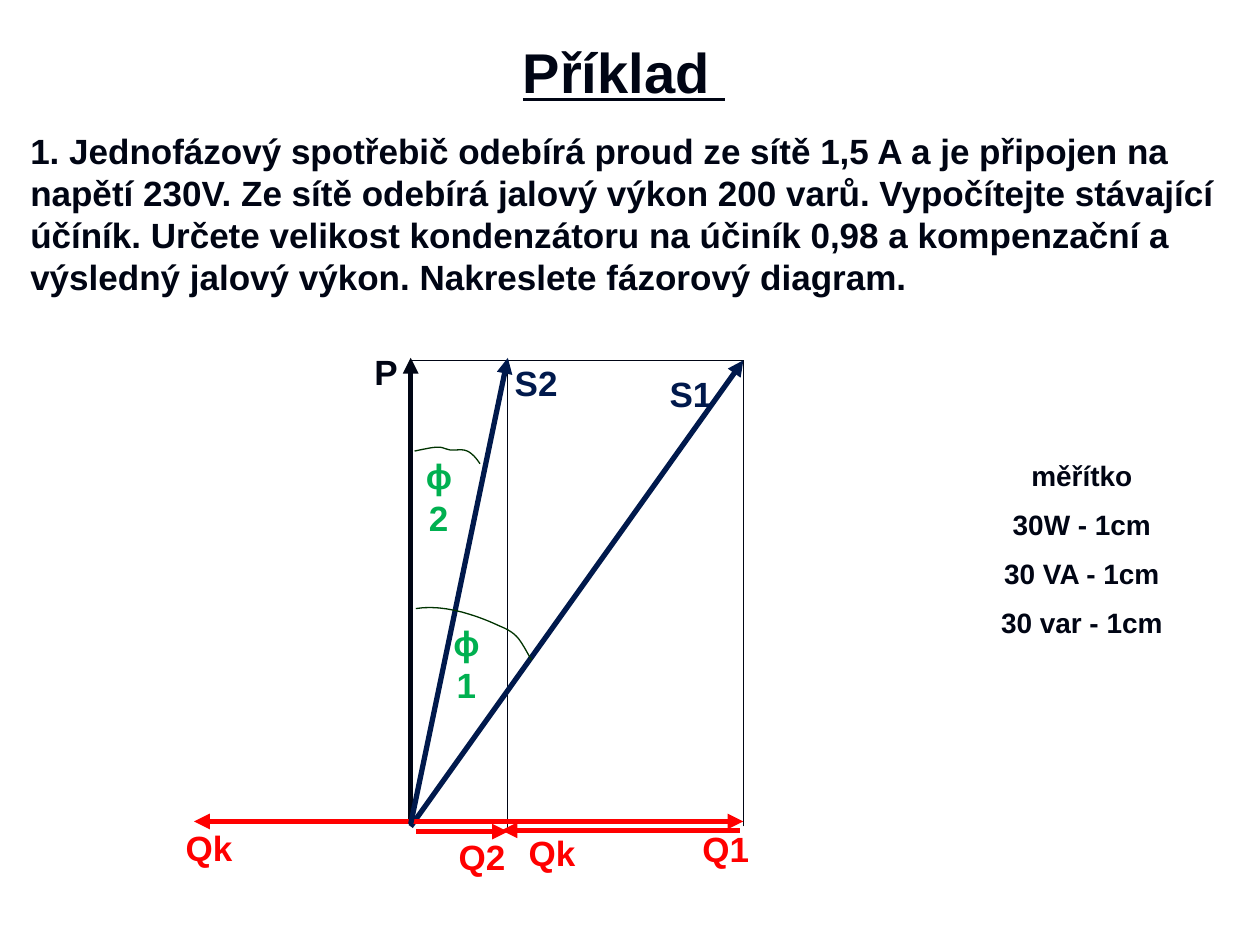
from lxml import etree
from pptx import Presentation
from pptx.dml.color import RGBColor
from pptx.enum import shapes, text
from pptx.oxml.ns import qn
from pptx.util import Pt

INK, NAVY, RED, GREEN, ARC = "000514", "00194C", "FF0000", "00B050", "003300"


def color(value):
    return RGBColor.from_string(value)


def add_text(slide, content, box, size=20, fill=INK, align=text.PP_ALIGN.CENTER,
             anchor=text.MSO_ANCHOR.TOP, underline=False, wrap=True, gap=0, inset=(7.2, 3.6)):
    frame = slide.shapes.add_textbox(*map(Pt, box)).text_frame
    frame.word_wrap = wrap
    frame.vertical_anchor = anchor
    frame.margin_left = frame.margin_right = Pt(inset[0])
    frame.margin_top = frame.margin_bottom = Pt(inset[1])
    for index, line in enumerate(content.split("\n")):
        paragraph = frame.add_paragraph() if index else frame.paragraphs[0]
        paragraph.alignment = align
        paragraph.space_before = Pt(gap if index else 0)
        run = paragraph.add_run()
        run.text = line
        font = run.font
        font.name, font.size, font.bold = "Arial", Pt(size), True
        font.underline = underline
        font.color.rgb = color(fill)


def add_line(slide, start, end, stroke=INK, width=0.5, arrow=False):
    line = slide.shapes.add_connector(
        shapes.MSO_CONNECTOR.STRAIGHT, *map(Pt, (*start, *end)))
    line.line.color.rgb = color(stroke)
    line.line.width = Pt(width)
    if arrow:
        etree.SubElement(line.line._get_or_add_ln(), qn("a:tailEnd"), type="triangle")
    etree.SubElement(line._element.spPr, qn("a:effectLst"))


def bezier(points, t):
    weights = ((1 - t) ** 3, 3 * t * (1 - t) ** 2, 3 * t * t * (1 - t), t ** 3)
    return tuple(sum(w * p[axis] for w, p in zip(weights, points)) for axis in (0, 1))


def add_arc(slide, controls, steps=12):
    track = [bezier(controls[first:first + 4], step / steps)
             for first in range(0, len(controls) - 1, 3) for step in range(1, steps + 1)]
    builder = slide.shapes.build_freeform(*map(Pt, controls[0]))
    builder.add_line_segments([(Pt(x), Pt(y)) for x, y in track], close=False)
    arc = builder.convert_to_shape()
    arc.shadow.inherit = False
    arc.fill.background()
    arc.line.color.rgb = color(ARC)
    arc.line.width = Pt(0.75)


def build_title(slide, box):
    add_text(slide, "Příklad ", box, size=32, underline=True, anchor=text.MSO_ANCHOR.MIDDLE)


def build_task(slide, box):
    add_text(slide, "1. Jednofázový spotřebič odebírá proud ze sítě 1,5 A a je připojen na "
             "napětí 230V. Ze sítě odebírá jalový výkon 200 varů. Vypočítejte stávající "
             "účíník. Určete velikost kondenzátoru na účiník 0,98 a kompenzační a "
             "výsledný jalový výkon. Nakreslete fázorový diagram.",
             box, align=text.PP_ALIGN.LEFT, inset=(2.9, 2.9))


def build_scale(slide, box):
    add_text(slide, "měřítko\n30W - 1cm\n30 VA - 1cm\n30 var - 1cm", box, size=16, gap=8.8)


def build_phasors(slide, left, top):
    axis, s2_x, s1_x = 136.1, 191.6, 326.2
    peak, base, foot = 9.3, 272.8, 275.7
    phasors = [
        ((axis, base + 1.5), (axis, peak - 1.4), INK),
        ((axis, base), (s1_x, base), RED),
        ((axis, foot), (s1_x, peak), NAVY),
        ((147.6, base), (12.3, base), RED),
        ((324, 277.9), (188, 277.9), RED),
        ((139, 278.6), (s2_x, 278.6), RED),
        ((axis, base + 1.5), (s2_x, peak - 1.4), NAVY),
    ]
    guides = [
        ((axis, peak), (s1_x, peak)),
        ((s1_x, foot), (s1_x, peak)),
        ((s2_x, foot + 1.5), (s2_x, peak + 1.4)),
    ]
    labels = [
        ("P", 108, 0, 28, INK),
        ("S1", 276.5, 13, 39.6, NAVY),
        ("S2", 186.5, 6.5, 42.5, NAVY),
        ("Q1", 295.2, 272.9, 41.8, RED),
        ("Q2", 155.6, 277.2, 42.5, RED),
        ("Qk", 0, 272.2, 41.8, RED),
        ("Qk", 195.9, 275, 41.8, RED),
    ]
    angles = [
        ("ϕ1", 153.4, 154.8, [(139, 151.2), (156.3, 148.3), (176.4, 156.2), (187.2, 161.3),
                              (198, 165.6), (198.8, 169.9), (205.2, 180.7)]),
        ("ϕ2", 137.6, 59.8, [(138.3, 61.2), (154.8, 57.6), (152, 59), (158.4, 60.5),
                             (164.9, 61.2), (168.5, 57.6), (175.7, 68.4)]),
    ]

    def place(point):
        return left + point[0], top + point[1]

    for start, end in guides:
        add_line(slide, place(start), place(end))
    for start, end, stroke in phasors:
        add_line(slide, place(start), place(end), stroke, width=3, arrow=True)
    for name, x, y, width, fill in labels:
        add_text(slide, name, (*place((x, y)), width, 31.7), fill=fill, wrap=False)
    for name, x, y, controls in angles:
        add_arc(slide, [place(point) for point in controls])
        add_text(slide, name, (*place((x, y)), 29, 55), fill=GREEN)


def main():
    deck = Presentation()
    deck.slide_width, deck.slide_height = Pt(720), Pt(540)
    slide = deck.slides.add_slide(deck.slide_layouts[6])
    build_title(slide, (19.4, 15.1, 674.6, 51.1))
    build_task(slide, (14.4, 71.3, 697.7, 103))
    build_phasors(slide, 98.6, 196.6)
    build_scale(slide, (553, 258.5, 130.3, 113.8))
    deck.save("out.pptx")


if __name__ == "__main__":
    main()
